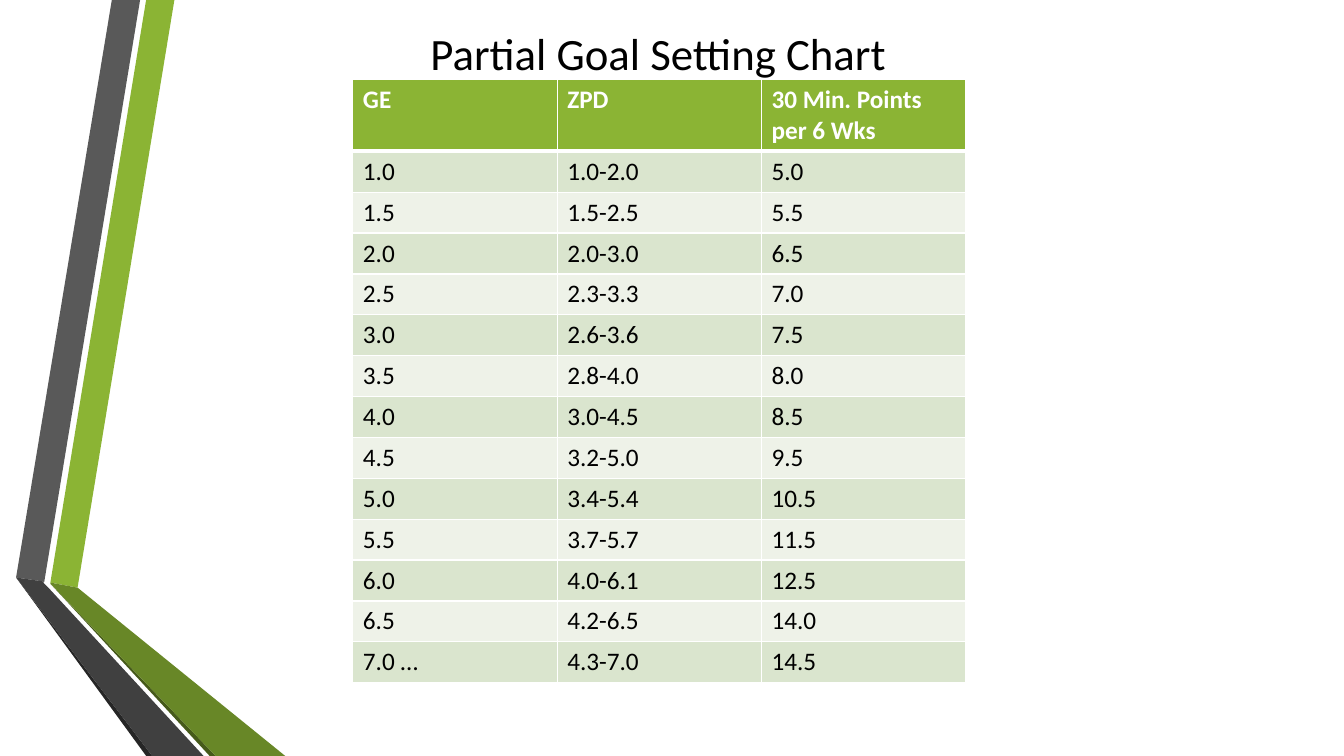
import pptx
import pptx.dml.color
import pptx.enum.text
import pptx.oxml
import pptx.oxml.ns
import pptx.util

Inches = pptx.util.Inches

TITLE = "Partial Goal Setting Chart"
HEADER = ("GE", "ZPD", "30 Min. Points per 6 Wks")
GOALS = [
    ("1.0", "1.0-2.0", "5.0"),
    ("1.5", "1.5-2.5", "5.5"),
    ("2.0", "2.0-3.0", "6.5"),
    ("2.5", "2.3-3.3", "7.0"),
    ("3.0", "2.6-3.6", "7.5"),
    ("3.5", "2.8-4.0", "8.0"),
    ("4.0", "3.0-4.5", "8.5"),
    ("4.5", "3.2-5.0", "9.5"),
    ("5.0", "3.4-5.4", "10.5"),
    ("5.5", "3.7-5.7", "11.5"),
    ("6.0", "4.0-6.1", "12.5"),
    ("6.5", "4.2-6.5", "14.0"),
    ("7.0 …", "4.3-7.0", "14.5"),
]
RIBBONS = [
    ("8BB434", [(0.5, 5.78), (0.77, 5.83), (1.73, 0), (1.45, 0)]),
    ("595959", [(1.39, 0), (1.11, 0), (0.16, 5.73), (0.44, 5.77)]),
    ("262626", [(0.16, 5.73), (1.45, 7.5), (1.51, 7.5)]),
    ("465A1A", [(0.5, 5.79), (2.08, 7.5), (2.14, 7.5)]),
    ("688727", [(0.5, 5.79), (2.14, 7.5), (2.83, 7.5), (0.77, 5.83), (0.5, 5.78)]),
    ("404040", [(2.02, 7.5), (0.48, 5.83), (0.43, 5.78), (0.44, 5.77), (0.16, 5.73), (1.51, 7.5)]),
]
HEADER_FILL = "8BB434"
BAND_FILLS = ("DAE5CE", "EEF2E8")
BORDER_COLOR = "FFFFFF"
TABLE_LEFT, TABLE_TOP, TABLE_WIDTH, TABLE_HEIGHT = 3.5, 0.79, 6.08, 5.97
HEADER_HEIGHT = 0.7
TITLE_BOX = {"left": 3.49, "top": 0.21, "width": 6.08, "height": 0.64}
TITLE_FRAME = {
    "word_wrap": True,
    "vertical_anchor": pptx.enum.text.MSO_ANCHOR.TOP,
    "auto_size": pptx.enum.text.MSO_AUTO_SIZE.NONE,
}
TITLE_FONT = {"name": "Calibri", "size": pptx.util.Pt(32), "bold": False}
HEADER_FONT = {"name": "Calibri", "size": pptx.util.Pt(18), "bold": True}
BODY_FONT = {**HEADER_FONT, "bold": False}


def set_attributes(target, values):
    for name, value in values.items():
        setattr(target, name, value)


def set_color(color_format, color):
    color_format.rgb = pptx.dml.color.RGBColor.from_string(color)


def set_fill(fill, color):
    fill.solid()
    set_color(fill.fore_color, color)


def set_text(text_frame, text, font, color):
    text_frame.text = text
    run = text_frame.paragraphs[0].runs[0]
    set_attributes(run.font, font)
    set_color(run.font.color, color)


def add_ribbon(slide, color, points):
    start, *rest = [(Inches(x), Inches(y)) for x, y in points]
    builder = slide.shapes.build_freeform(*start)
    builder.add_line_segments(rest, close=True)
    shape = builder.convert_to_shape()
    shape.shadow.inherit = False
    set_fill(shape.fill, color)
    shape.line.fill.background()


def set_borders(cell, widths):
    properties = cell._tc.get_or_add_tcPr()
    for index, (side, width) in enumerate(widths.items()):
        border = pptx.oxml.parse_xml(
            f'<a:ln{side} {pptx.oxml.ns.nsdecls("a")} w="{pptx.util.Pt(width)}">'
            f'<a:solidFill><a:srgbClr val="{BORDER_COLOR}"/></a:solidFill></a:ln{side}>'
        )
        properties.insert(index, border)


def add_goal_table(slide):
    rows = [HEADER, *GOALS]
    box = (TABLE_LEFT, TABLE_TOP, TABLE_WIDTH, TABLE_HEIGHT)
    frame = slide.shapes.add_table(len(rows), len(HEADER), *map(Inches, box))
    table = frame.table
    for column in table.columns:
        column.width = Inches(TABLE_WIDTH / len(HEADER))
    body_height = (TABLE_HEIGHT - HEADER_HEIGHT) / len(GOALS)
    for row_index, values in enumerate(rows):
        is_header = row_index == 0
        table.rows[row_index].height = Inches(HEADER_HEIGHT if is_header else body_height)
        fill = HEADER_FILL if is_header else BAND_FILLS[(row_index - 1) % 2]
        font = HEADER_FONT if is_header else BODY_FONT
        color = "FFFFFF" if is_header else "000000"
        widths = {"L": 1, "R": 1, "T": 3 if row_index == 1 else 1, "B": 3 if is_header else 1}
        for column_index, value in enumerate(values):
            cell = table.cell(row_index, column_index)
            set_text(cell.text_frame, value, font, color)
            set_fill(cell.fill, fill)
            set_borders(cell, widths)


def main():
    presentation = pptx.Presentation()
    set_attributes(presentation, {"slide_width": Inches(13.33), "slide_height": Inches(7.5)})
    slide = presentation.slides.add_slide(presentation.slide_layouts[5])
    set_fill(slide.background.fill, "FFFFFF")
    for color, points in RIBBONS:
        add_ribbon(slide, color, points)
    add_goal_table(slide)
    title = slide.shapes.title
    set_attributes(title, {name: Inches(value) for name, value in TITLE_BOX.items()})
    set_attributes(title.text_frame, TITLE_FRAME)
    set_text(title.text_frame, TITLE, TITLE_FONT, "000000")
    title.text_frame.paragraphs[0].alignment = pptx.enum.text.PP_ALIGN.CENTER
    presentation.save("out.pptx")


if __name__ == "__main__":
    main()
